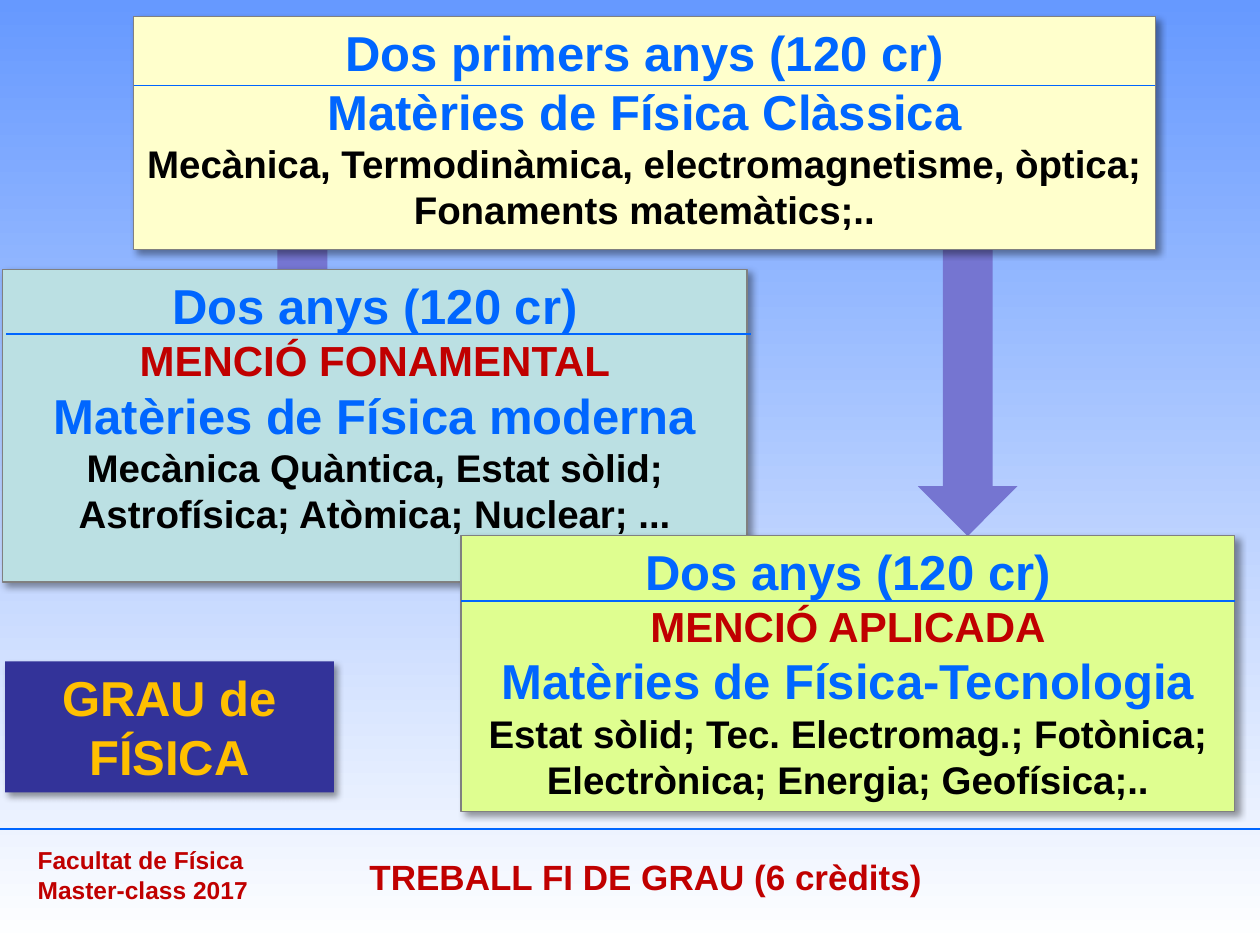
from lxml import etree
from pptx import Presentation
from pptx import util as u
from pptx.dml.color import RGBColor
from pptx.enum import shapes, text
from pptx.oxml import ns

PX = 9144
INK = {
    "sky": "6699FF", "white": "FFFFFF", "blue": "0066FF", "red": "C00000",
    "black": "000000", "gold": "FFC000", "grey": "808080", "arrow": "7575D1",
    "cream": "FFFFCC", "teal": "BBE0E3", "lime": "DFFE90", "navy": "333399",
}


def px(*vals):
    """Turn px lengths into EMU."""
    return [u.Emu(v * PX) for v in vals]


def ink(name):
    """Return the named colour."""
    return RGBColor.from_string(INK[name])


def shade(shape):
    """Give a shape a soft shadow to the lower right."""
    props = shape._element.spPr
    list_ = etree.SubElement(props, ns.qn("a:effectLst"))
    outer = etree.SubElement(list_, ns.qn("a:outerShdw"), blurRad="50800",
                             dist="38100", dir="2700000", algn="tl", rotWithShape="0")
    tone = etree.SubElement(outer, ns.qn("a:srgbClr"), val=INK["black"])
    etree.SubElement(tone, ns.qn("a:alpha"), val="40000")


def write(shape, rows, align=text.PP_ALIGN.CENTER, wrap=True):
    """Fill a shape with bold rows of (words, size, colour)."""
    frame = shape.text_frame
    frame.word_wrap = wrap
    frame.vertical_anchor = text.MSO_ANCHOR.TOP
    for i, (words, size, tint) in enumerate(rows):
        para = frame.add_paragraph() if i else frame.paragraphs[0]
        para.text = words
        para.alignment = align
        font = para.font
        font.name, font.size, font.bold = "Arial", u.Pt(size), True
        font.color.rgb = ink(tint)


def rule(slide, x, y, width, weight):
    """Draw a level blue line."""
    line = slide.shapes.add_connector(
        shapes.MSO_CONNECTOR.STRAIGHT, *px(x, y, x + width, y))
    line.line.color.rgb = ink("blue")
    line.line.width = u.Pt(weight)
    etree.SubElement(line._element.spPr, ns.qn("a:effectLst"))


def card(slide, box, fill, rows, edge=True):
    """Place a shadowed card with its text."""
    shape = slide.shapes.add_shape(shapes.MSO_SHAPE.RECTANGLE, *px(*box))
    shape.fill.solid()
    shape.fill.fore_color.rgb = ink(fill)
    if edge:
        shape.line.color.rgb = ink("grey")
        shape.line.width = u.Pt(0.75)
    else:
        shape.line.fill.background()
    shade(shape)
    write(shape, rows)


def stage(slide, box, fill, rows, drop, shift=0):
    """Place a card whose heading is underlined."""
    card(slide, box, fill, rows)
    x, y, width, _ = box
    rule(slide, x + shift, y + drop, width, 0.75)


def arrow(slide, box):
    """Place an arrow turned to point down."""
    shape = slide.shapes.add_shape(shapes.MSO_SHAPE.RIGHT_ARROW, *px(*box))
    shape.rotation = 90
    shape.shadow.inherit = False
    shape.fill.solid()
    shape.fill.fore_color.rgb = ink("arrow")
    shape.line.fill.background()


def label(slide, box, rows, **look):
    """Place a text box."""
    write(slide.shapes.add_textbox(*px(*box)), rows, **look)


def sky(slide):
    """Paint the background from blue down to white."""
    fill = slide.background.fill
    fill.gradient()
    fill.gradient_angle = 270
    for stop, name, pos in zip(fill.gradient_stops, ("sky", "white"), (0, 1)):
        stop.color.rgb = ink(name)
        stop.position = pos


def foot(slide, x, y, width):
    """Place the footer line and its two labels."""
    rule(slide, x, y, width, 1.5)
    label(slide, (x + 20, y + 8, 188, 57),
          [("Facultat de Física", 14, "red"), ("Master-class 2017", 14, "red")],
          align=text.PP_ALIGN.LEFT, wrap=False)
    label(slide, (x + 280, y + 16, 465, 43),
          [("TREBALL FI DE GRAU (6 crèdits)", 20, "red")])


def degree(slide):
    """Build the degree plan."""
    sky(slide)
    for x in (122, 650):
        arrow(slide, (x, 268, 236, 79))
    stage(slide, (106, 13, 811, 185), "cream", [
        ("Dos primers anys (120 cr)", 28, "blue"),
        ("Matèries de Física Clàssica", 28, "blue"),
        ("Mecànica, Termodinàmica, electromagnetisme, òptica; "
         "Fonaments matemàtics;..", 22, "black")], 55)
    stage(slide, (2, 214, 591, 248), "teal", [
        ("Dos anys (120 cr)", 28, "blue"),
        ("MENCIÓ FONAMENTAL", 24, "red"),
        ("Matèries de Física moderna", 28, "blue"),
        ("Mecànica Quàntica, Estat sòlid;", 22, "black"),
        ("Astrofísica; Atòmica; Nuclear; ...", 22, "black")], 51, 3)
    stage(slide, (366, 425, 614, 219), "lime", [
        ("Dos anys (120 cr)", 28, "blue"),
        ("MENCIÓ APLICADA", 24, "red"),
        ("Matèries de Física-Tecnologia", 28, "blue"),
        ("Estat sòlid; Tec. Electromag.; Fotònica; "
         "Electrònica; Energia; Geofísica;..", 22, "black")], 52)
    card(slide, (4, 525, 261, 104), "navy", [("GRAU de FÍSICA", 28, "gold")], edge=False)
    foot(slide, 0, 658, 1000)


def main():
    """Make and save the deck."""
    deck = Presentation()
    deck.slide_width, deck.slide_height = px(1000, 750)
    degree(deck.slides.add_slide(deck.slide_layouts[6]))
    deck.save("out.pptx")


if __name__ == "__main__":
    main()
